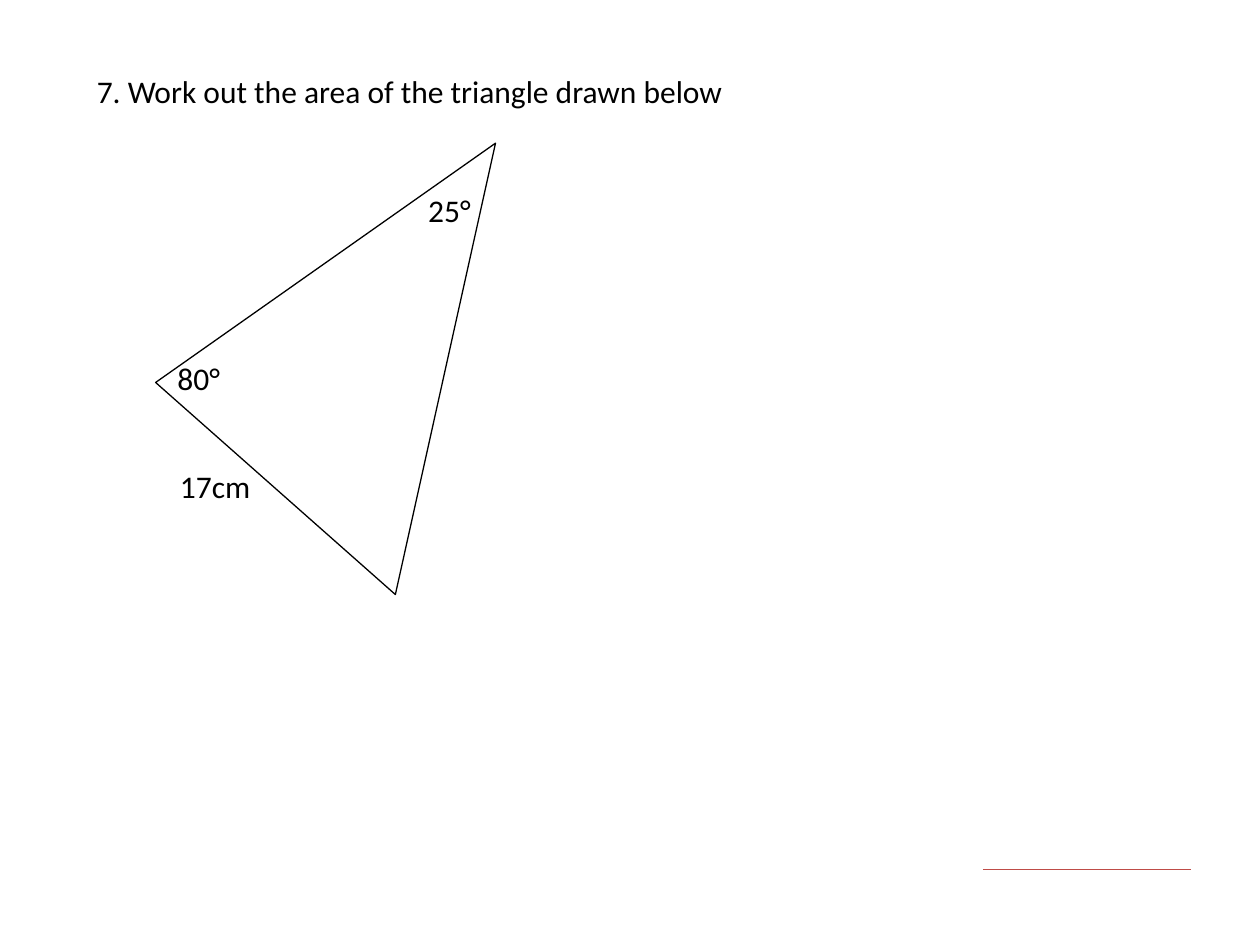
import pptx
import pptx.dml.color
import pptx.enum.shapes
import pptx.util
from lxml import etree
from pptx.oxml.ns import qn
from pptx.util import Inches

COLOURS = {"ink": "000000", "paper": "FFFFFF", "answer": "BF4C48"}
FONT = "Calibri"


def colour(name):
    return pptx.dml.color.RGBColor.from_string(COLOURS[name])


def add_text(shapes, text, left, top, width, height, space_after=0):
    box = shapes.add_textbox(Inches(left), Inches(top), Inches(width), Inches(height))
    box.text_frame.word_wrap = True
    box.text_frame.text = text
    paragraph = box.text_frame.paragraphs[0]
    paragraph.space_after = pptx.util.Pt(space_after)
    font = paragraph.runs[0].font
    font.name = FONT
    font.size = pptx.util.Pt(18)
    font.color.rgb = colour("ink")


def add_triangle_diagram(slide, left, top):
    group = slide.shapes.add_group_shape()
    triangle = group.shapes.add_shape(
        pptx.enum.shapes.MSO_SHAPE.ISOSCELES_TRIANGLE,
        Inches(left + 0.67), Inches(top), Inches(2.54), Inches(3.21),
    )
    triangle.adjustments[0] = 0.3
    triangle.rotation = 41.5
    triangle.shadow.inherit = False
    triangle.fill.solid()
    triangle.fill.fore_color.rgb = colour("paper")
    triangle.line.color.rgb = colour("ink")
    triangle.line.width = pptx.util.Pt(0.75)

    labels = [
        ("17cm", 0.02, 2.59, 1.18, 0.67),
        ("25°", 1.99, 0.4, 1.1, 0.6),
        ("80°", 0, 1.73, 1.21, 0.6),
    ]
    for text, across, down, width, height in labels:
        add_text(group.shapes, text, left + across, top + down, width, height, space_after=10)


def add_answer_line(slide, left, top, width):
    line = slide.shapes.add_connector(
        pptx.enum.shapes.MSO_CONNECTOR.STRAIGHT,
        Inches(left), Inches(top), Inches(left + width), Inches(top),
    )
    line.line.color.rgb = colour("answer")
    line.line.width = pptx.util.Pt(0.75)
    etree.SubElement(line._element.spPr, qn("a:effectLst"))


def main():
    presentation = pptx.Presentation()
    presentation.slide_width = Inches(10)
    presentation.slide_height = Inches(7.5)
    slide = presentation.slides.add_slide(presentation.slide_layouts[6])
    add_text(slide.shapes, "7. Work out the area of the triangle drawn below", 0.67, 0.52, 5.33, 0.71)
    add_triangle_diagram(slide, 1.31, 1.07)
    add_answer_line(slide, 7.8, 6.9, 1.65)
    presentation.save("out.pptx")


if __name__ == "__main__":
    main()
